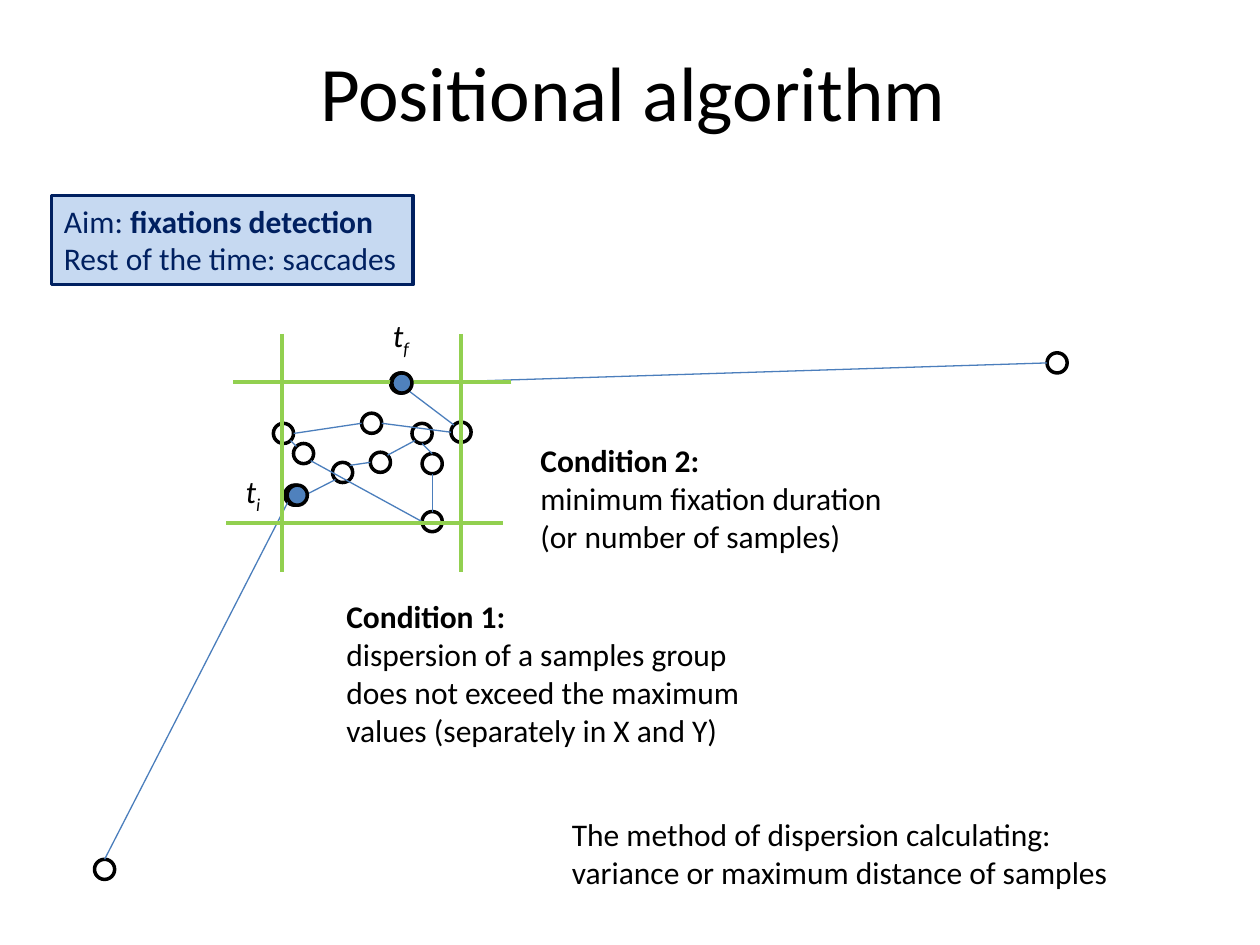
from math import cos, pi, sin
from pptx import Presentation
from pptx.dml.color import RGBColor
from pptx.enum import shapes as kinds, text as modes
from pptx.oxml import parse_xml
from pptx.oxml.ns import nsdecls
from pptx.util import Pt

HUES = {"ink": "000000", "navy": "002060", "pale": "C6D9F1",
        "dot": "4F81BD", "gaze": "4B7EBC", "limit": "92D050"}
RAD = 5.76
# Gaze samples in time order: centre x, centre y, entry and exit site
# (eighths of a turn, counted anticlockwise from the top).
TRAIL = [
    (5.8, 319.8, 0, 0), (114.5, 106, 3, 6), (141.8, 93, 3, 7),
    (163.4, 87.2, 2, 7), (187.2, 70.7, 3, 4), (193, 88, 0, 4),
    (193, 121.1, 0, 2), (119.5, 82.2, 5, 1), (108, 70.7, 5, 6),
    (158.4, 64.9, 2, 6), (209.5, 70, 2, 1), (175, 41.9, 5, 6),
    (550.1, 30.4, 2, 2),
]
LIMITS = [(107.3, 13.8, 107.3, 149.9), (209.5, 13.8, 209.5, 149.9),
          (238.3, 41.2, 79.2, 41.2), (233.3, 121.8, 74.9, 121.8)]


def hue(name):
    """Return the named colour."""
    return RGBColor.from_string(HUES[name])


def write(shape, paras, size=18, color="ink", align="LEFT", anchor="TOP",
          wrap=False):
    """Fill a shape with paragraphs of (text, style letters) runs."""
    frame = shape.text_frame
    frame.word_wrap = wrap
    if not wrap:
        frame.auto_size = modes.MSO_AUTO_SIZE.SHAPE_TO_FIT_TEXT
    frame.vertical_anchor = modes.MSO_ANCHOR[anchor]
    for i, runs in enumerate(paras):
        para = frame.add_paragraph() if i else frame.paragraphs[0]
        para.alignment = modes.PP_ALIGN[align]
        for words, style in runs:
            for j, line in enumerate(words.split("\n")):
                if j:
                    para.add_line_break()
                run = para.add_run()
                run.text = line
                font = run.font
                font.name, font.size = "Calibri", Pt(size)
                font.bold, font.italic = "b" in style, "i" in style
                font.color.rgb = hue(color)
                if "s" in style:
                    run._r.get_or_add_rPr().set("baseline", "-25000")


def label(slide, box, paras, **form):
    """Add a text box."""
    write(slide.shapes.add_textbox(*map(Pt, box)), paras, **form)


def shape(slide, kind, box, fill=None, line="ink"):
    """Add a preset shape with a two-point outline."""
    item = slide.shapes.add_shape(kinds.MSO_SHAPE[kind], *map(Pt, box))
    item.shadow.inherit = False
    if fill:
        item.fill.solid()
        item.fill.fore_color.rgb = hue(fill)
    else:
        item.fill.background()
    item.line.color.rgb = hue(line)
    item.line.width = Pt(2)
    return item


def link(slide, ends, color, width):
    """Add a straight line."""
    item = slide.shapes.add_connector(kinds.MSO_CONNECTOR.STRAIGHT,
                                      *map(Pt, ends))
    item.line.color.rgb = hue(color)
    item.line.width = Pt(width)
    item._element.spPr.append(parse_xml(f"<a:effectLst {nsdecls('a')}/>"))


def ring(slide, x, y, fill=None):
    """Add a sample circle around its centre."""
    shape(slide, "OVAL", (x - RAD, y - RAD, 2 * RAD, 2 * RAD), fill)


def rim(x, y, site):
    """Return the point at a site on the edge of a sample."""
    turn = site * pi / 4
    return x - RAD * sin(turn), y - RAD * cos(turn)


def scan(slide, left, top):
    """Draw the gaze trail, its limits and the fixation ends."""
    trail = [(left + x, top + y, a, b) for x, y, a, b in TRAIL]
    for x, y, _, _ in trail:
        ring(slide, x, y)
    for (x, y, _, out), (u, v, into, _) in zip(trail, trail[1:]):
        link(slide, rim(x, y, out) + rim(u, v, into), "gaze", 0.75)
    for x, y, u, v in LIMITS:
        link(slide, (left + x, top + y, left + u, top + v), "limit", 2)
    marks = [("i", 115.9, 106, 79.2, 89.4), ("f", 175.7, 41.9, 163.4, 0)]
    for sub, x, y, u, v in marks:
        ring(slide, left + x, top + y, "dot")
        label(slide, (left + u, top + v, 24, 28.8),
              [[("t", "i"), (sub, "is")]])


def aim(slide, box):
    """Draw the framed statement of the aim."""
    item = shape(slide, "RECTANGLE", box, "pale", "navy")
    write(item, [[("Aim: ", ""), ("fixations detection", "b")],
                 [("Rest of the time: saccades", "")]], color="navy")


def notes(slide, left, top):
    """Place the two conditions and the remark on method."""
    label(slide, (left, top + 89.3, 242, 94.3), [
        [("Condition 1:", "b")],
        [("dispersion of a samples group", "")],
        [("does not exceed the maximum", "")],
        [("values (separately in X and Y)", "")]])
    label(slide, (left + 110.9, top, 212.4, 72.7), [
        [("Condition 2: \n", "b"), ("minimum fixation duration", "")],
        [("(or number of samples)", "")]])
    label(slide, (left + 128.9, top + 213.8, 324, 51.1), [
        [("The method of dispersion calculating: \n"
          "variance or maximum distance of samples", "")]])


def main():
    """Build and save the slide."""
    deck = Presentation()
    deck.slide_width, deck.slide_height = Pt(720), Pt(540)
    slide = deck.slides.add_slide(deck.slide_layouts[6])
    label(slide, (14.4, 25.9, 694.8, 51.8), [[("Positional algorithm", "")]],
          size=44, align="CENTER", anchor="MIDDLE", wrap=True)
    scan(slide, 54, 177)
    notes(slide, 190.8, 248.4)
    aim(slide, (29.5, 111.6, 206.6, 51.1))
    deck.save("out.pptx")


if __name__ == "__main__":
    main()
